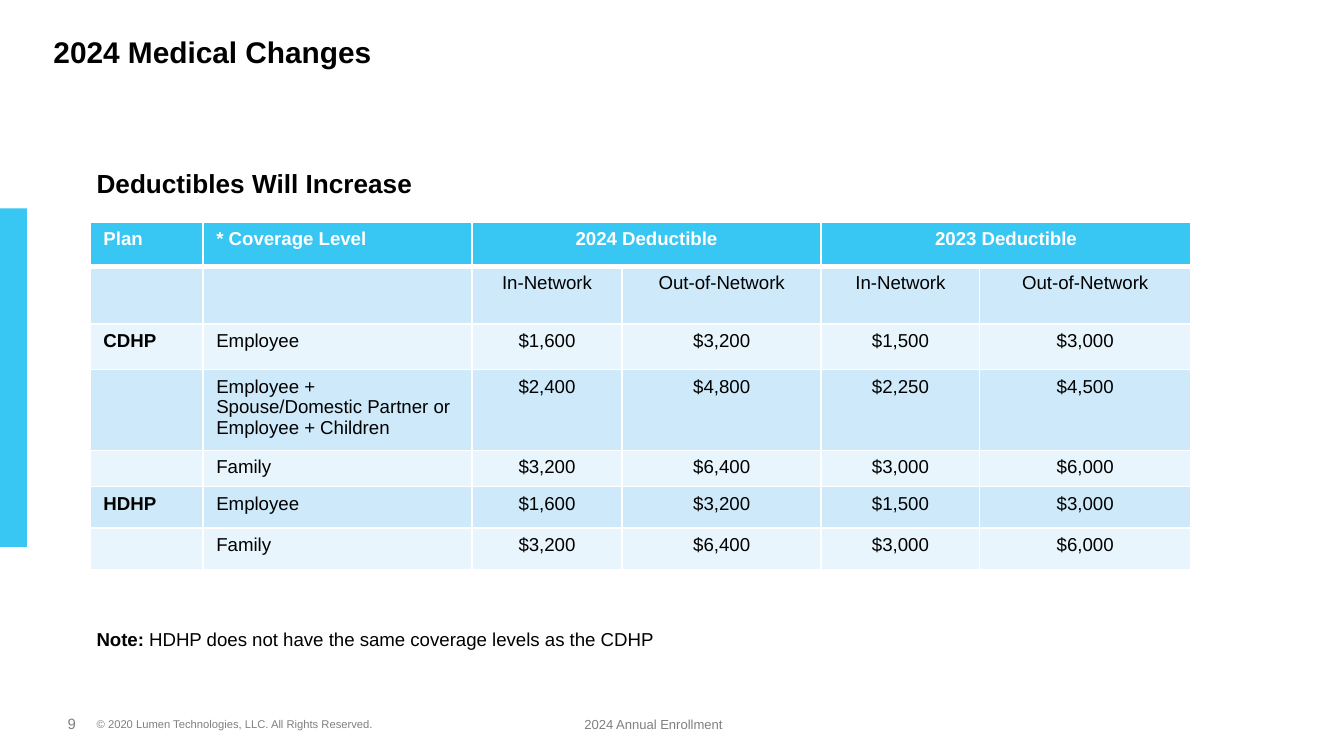
from lxml import etree
from pptx import Presentation
from pptx import util as u
from pptx.dml import color
from pptx.enum import shapes, text
from pptx.oxml import ns

SKY, PALE, MIST = "38C6F3", "CEEAFA", "E8F5FD"
WHITE, BLACK, GREY = "FFFFFF", "000000", "808080"
LEFT, MID = text.PP_ALIGN.LEFT, text.PP_ALIGN.CENTER
TOP, LOW = text.MSO_ANCHOR.TOP, text.MSO_ANCHOR.BOTTOM

COLS = [0.84, 2, 1.12, 1.48, 1.18, 1.57]
ROWS = [0.33, 0.43, 0.34, 0.59, 0.27, 0.31, 0.31]
CELLS = [
    ["Plan", "* Coverage Level", "2024 Deductible", "", "2023 Deductible", ""],
    ["", "", "In-Network", "Out-of-Network", "In-Network", "Out-of-Network"],
    ["CDHP", "Employee", "$1,600", "$3,200", "$1,500", "$3,000"],
    ["", "Employee + Spouse/Domestic Partner or Employee + Children",
     "$2,400", "$4,800", "$2,250", "$4,500"],
    ["", "Family", "$3,200", "$6,400", "$3,000", "$6,000"],
    ["HDHP", "Employee", "$1,600", "$3,200", "$1,500", "$3,000"],
    ["", "Family", "$3,200", "$6,400", "$3,000", "$6,000"],
]


def rgb(code):
    """Turn a hex string into a colour."""
    return color.RGBColor.from_string(code)


def place(box):
    """Turn left, top, width and height into lengths."""
    return [u.Inches(n) for n in box]


def add_run(para, words, size, tint, bold=False):
    """Append one styled run to a paragraph."""
    run = para.add_run()
    run.text = words
    font = run.font
    font.name, font.size, font.bold = "Arial", u.Pt(size), bold
    font.color.rgb = rgb(tint)


def add_text(slide, box, runs, size, tint=BLACK, align=LEFT, anchor=TOP, inset=0.1):
    """Add a text box from pairs of words and boldness."""
    frame = slide.shapes.add_textbox(*place(box)).text_frame
    frame.word_wrap = True
    frame.vertical_anchor = anchor
    frame.margin_left = u.Inches(inset)
    para = frame.paragraphs[0]
    para.alignment = align
    for words, bold in runs:
        add_run(para, words, size, tint, bold)


def add_bar(slide, box, tint):
    """Add a plain filled bar."""
    bar = slide.shapes.add_shape(shapes.MSO_SHAPE.RECTANGLE, *place(box))
    bar.shadow.inherit = False
    bar.fill.solid()
    bar.fill.fore_color.rgb = rgb(tint)
    bar.line.fill.background()


def add_edge(cell, side, width):
    """Draw one white border of a cell."""
    props = cell._tc.get_or_add_tcPr()
    line = etree.SubElement(props, ns.qn("a:ln" + side), w=str(u.Pt(width)))
    fill = etree.SubElement(line, ns.qn("a:solidFill"))
    etree.SubElement(fill, ns.qn("a:srgbClr"), val=WHITE)


def fill_cell(cell, words, row, col):
    """Style one cell and write its words."""
    head = row == 0
    edges = {"L": 1, "R": 1, "T": 3 if row == 1 else 1, "B": 3 if head else 1}
    for side, width in edges.items():
        add_edge(cell, side, width)
    cell.fill.solid()
    cell.fill.fore_color.rgb = rgb(SKY if head else PALE if row % 2 else MIST)
    para = cell.text_frame.paragraphs[0]
    para.font.size = u.Pt(10)
    para.alignment = MID if col > 1 else LEFT
    if words:
        add_run(para, words, 10, WHITE if head else BLACK, head or col == 0)


def add_grid(slide, left, top):
    """Add the table of deductibles."""
    box = place([left, top, sum(COLS), sum(ROWS)])
    grid = slide.shapes.add_table(len(ROWS), len(COLS), *box).table
    for col, width in enumerate(COLS):
        grid.columns[col].width = u.Inches(width)
    for row, height in enumerate(ROWS):
        grid.rows[row].height = u.Inches(height)
        for col, words in enumerate(CELLS[row]):
            fill_cell(grid.cell(row, col), words, row, col)
    for col in (2, 4):
        grid.cell(0, col).merge(grid.cell(0, col + 1))


def main():
    """Build and save the slide."""
    deck = Presentation()
    deck.slide_width = u.Inches(10)
    deck.slide_height = deck.slide_width * 9 // 16
    slide = deck.slides.add_slide(deck.slide_layouts[6])
    add_bar(slide, [0, 1.55, 0.2, 2.52], SKY)
    add_text(slide, [0.72, 5.29, 3.26, 0.2],
             [("© 2020 Lumen Technologies, LLC. All Rights Reserved.", False)],
             6, GREY, inset=0)
    add_text(slide, [0.3, 0.2, 2.8, 0.37], [("2024 Medical Changes", True)], 16)
    add_text(slide, [0.13, 5, 0.81, 0.5], [("9", False)], 8, GREY, MID, LOW)
    add_text(slide, [4.25, 5.25, 1.39, 0.25],
             [("2024 Annual Enrollment", False)], 7, GREY, anchor=LOW)
    add_text(slide, [0.62, 1.2, 2.58, 0.34],
             [("Deductibles Will Increase", True)], 14)
    add_text(slide, [0.62, 4.59, 7.26, 0.3],
             [("Note: ", True),
              ("HDHP does not have the same coverage levels as the CDHP", False)],
             10, anchor=LOW)
    add_grid(slide, 0.67, 1.65)
    deck.save("out.pptx")


if __name__ == "__main__":
    main()
